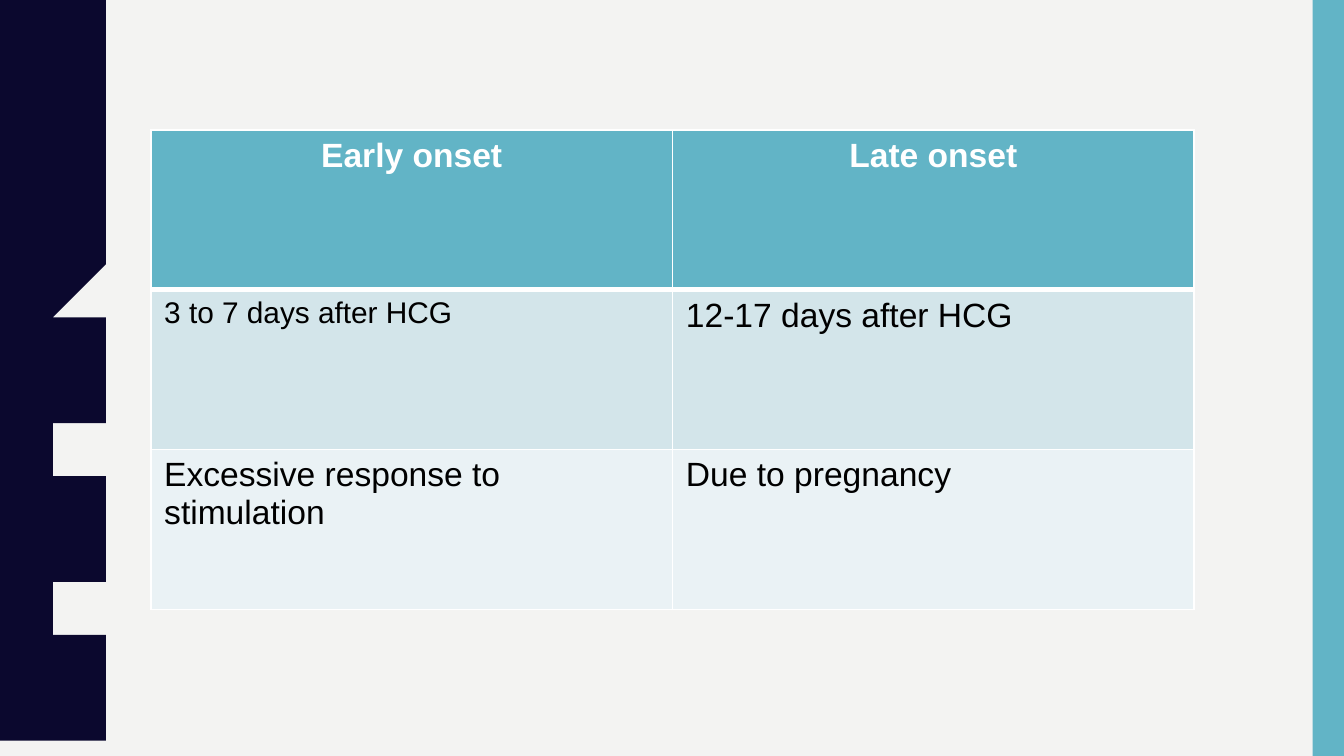
from dataclasses import dataclass

from lxml import etree
from pptx import Presentation
from pptx import util as u
from pptx.dml.color import RGBColor
from pptx.enum import shapes, text
from pptx.oxml import ns

BACKGROUND, NAVY, TEAL, WHITE, BLACK = "F3F3F2", "0B082E", "62B4C6", "FFFFFF", "000000"
SLIDE_WIDTH, SLIDE_HEIGHT = 25.4, 14.29
WAVE_COUNT = 5
# Edge of half a wave as (x, y) in cm, from trough to crest
HALF_WAVE = [
    (1.47, 0), (1.48, 0.14), (1.5, 0.27), (1.53, 0.38), (1.56, 0.48),
    (1.6, 0.56), (1.62, 0.64), (1.66, 0.71), (1.69, 0.79), (1.73, 0.87),
    (1.76, 0.95), (1.8, 1.05), (1.83, 1.17), (1.84, 1.29), (1.84, 1.43),
]


@dataclass
class CellText:
    content: str
    size: int = 18


@dataclass
class TableRow:
    cells: list[CellText]
    fill: str
    color: str = BLACK
    header: bool = False
    top_border: float = 1
    bottom_border: float = 1


ROWS = [
    TableRow([CellText("Early onset"), CellText("Late onset")], TEAL, WHITE,
             header=True, bottom_border=3),
    TableRow([CellText("3 to 7 days after HCG", 16), CellText("12-17 days after HCG")],
             "D3E5EA", top_border=3),
    TableRow([CellText("Excessive response to stimulation"), CellText("Due to pregnancy")],
             "EAF2F5"),
]


def paint(fill, color: str) -> None:
    fill.solid()
    fill.fore_color.rgb = RGBColor.from_string(color)


def style_panel(shape, color: str) -> None:
    shape.shadow.inherit = False
    paint(shape.fill, color)
    shape.line.fill.background()


def add_wavy_panel(slide) -> None:
    period = SLIDE_HEIGHT / WAVE_COUNT
    wave = HALF_WAVE + [(x, period - y) for x, y in reversed(HALF_WAVE[1:-1])]
    edge = [(x, y + period * number) for number in range(WAVE_COUNT) for x, y in wave]
    edge += [(HALF_WAVE[0][0], SLIDE_HEIGHT), (0, SLIDE_HEIGHT)]
    builder = slide.shapes.build_freeform(0, 0, scale=u.Cm(1))
    builder.add_line_segments(edge, close=True)
    style_panel(builder.convert_to_shape(), NAVY)


def add_side_bar(slide) -> None:
    width = 0.59
    bar = slide.shapes.add_shape(
        shapes.MSO_SHAPE.RECTANGLE, u.Cm(SLIDE_WIDTH - width), 0,
        u.Cm(width), u.Cm(SLIDE_HEIGHT))
    style_panel(bar, TEAL)


def add_borders(cell, row: TableRow) -> None:
    """Add white borders; they must come before the cell's fill."""
    properties = cell._tc.get_or_add_tcPr()
    widths = {"L": 1, "R": 1, "T": row.top_border, "B": row.bottom_border}
    for side, width in widths.items():
        line = etree.SubElement(properties, ns.qn(f"a:ln{side}"), w=str(u.Pt(width)))
        solid = etree.SubElement(line, ns.qn("a:solidFill"))
        etree.SubElement(solid, ns.qn("a:srgbClr"), val=WHITE)


def fill_cell(cell, cell_text: CellText, row: TableRow) -> None:
    add_borders(cell, row)
    paint(cell.fill, row.fill)
    cell.text_frame.text = cell_text.content
    paragraph = cell.text_frame.paragraphs[0]
    paragraph.alignment = text.PP_ALIGN.CENTER if row.header else text.PP_ALIGN.LEFT
    font = paragraph.runs[0].font
    font.name = "Arial"
    font.size = u.Pt(cell_text.size)
    font.bold = row.header
    font.color.rgb = RGBColor.from_string(row.color)


def add_onset_table(slide, rows: list[TableRow]) -> None:
    columns = len(rows[0].cells)
    table = slide.shapes.add_table(
        len(rows), columns, u.Cm(2.85), u.Cm(2.46),
        u.Cm(9.86 * columns), u.Cm(3.02 * len(rows))).table
    for row_index, row in enumerate(rows):
        for column_index, cell_text in enumerate(row.cells):
            fill_cell(table.cell(row_index, column_index), cell_text, row)


def main() -> None:
    presentation = Presentation()
    presentation.slide_width = u.Cm(SLIDE_WIDTH)
    presentation.slide_height = u.Cm(SLIDE_HEIGHT)
    slide = presentation.slides.add_slide(presentation.slide_layouts[6])
    paint(slide.background.fill, BACKGROUND)
    add_wavy_panel(slide)
    add_side_bar(slide)
    add_onset_table(slide, ROWS)
    presentation.save("out.pptx")


if __name__ == "__main__":
    main()
